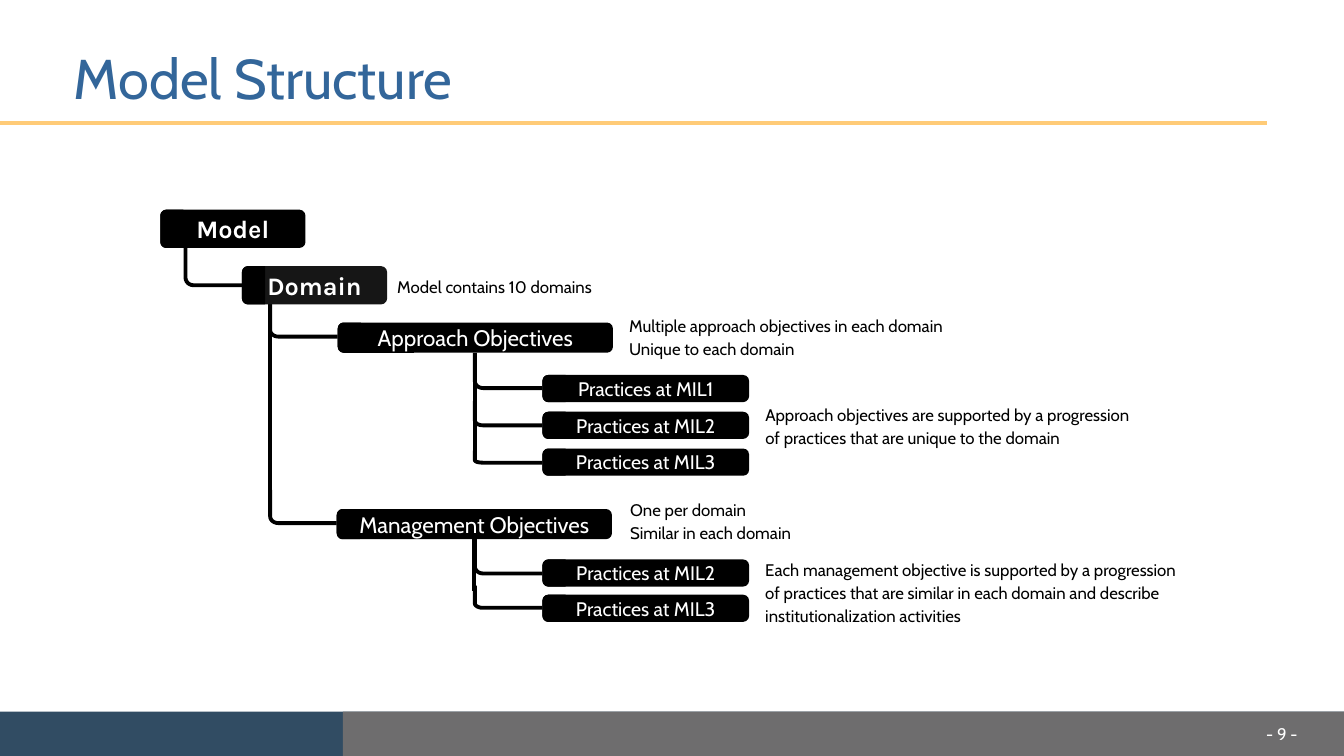
"""Build the Model Structure slide."""
from math import cos, pi, sin

from lxml import etree
from pptx import Presentation
from pptx import util as u
from pptx.dml.color import RGBColor
from pptx.enum import shapes, text
from pptx.oxml import ns

HUES = {"black": "000000", "soft": "161616", "white": "FFFFFF", "navy": "314C63",
        "gray": "6E6D6E", "gold": "FFCB77", "blue": "33669A"}
PAD = ("margin_left", "margin_top", "margin_right", "margin_bottom")
LEFT, MID, RIGHT = text.PP_ALIGN.LEFT, text.PP_ALIGN.CENTER, text.PP_ALIGN.RIGHT
NODES = {
    "model": ("Model", 1.59, 2.08, 1.44, 0.38, "black"),
    "domain": ("Domain", 2.4, 2.64, 1.44, 0.38, "soft"),
    "approach": ("Approach Objectives", 3.35, 3.2, 2.73, 0.3, "black"),
    "manage": ("Management Objectives", 3.34, 5.05, 2.73, 0.3, "black"),
}
FONTS = {0.38: {"name": "Karla", "size": u.Pt(18), "bold": True},
         0.3: {"size": u.Pt(16)}, 0.27: {"size": u.Pt(14)}}
LEVELS = (
    ("approach", 3.72, 0.365, (1, 2, 3), 4.5),
    ("manage", 5.55, 0.35, (2, 3), 5.86),
)
ELBOWS = (
    (1.84, 2.45, 2.4, 2.83), (2.68, 3.01, 3.35, 3.34), (2.68, 4.86, 3.34, 5.19),
    (4.71, 3.5, 5.38, 3.85), (4.71, 3.98, 5.38, 4.22), (4.71, 4.47, 5.38, 4.59),
    (4.71, 5.33, 5.38, 5.69), (4.71, 5.81, 5.38, 6.03),
)
NOTES = (
    ("Model contains 10 domains", 3.94, 2.7, 2.37, 0.26),
    ("Multiple approach objectives in each domain\nUnique to each domain",
     6.24, 3.13, 5.07, 0.4),
    ("One per domain\nSimilar in each domain", 6.25, 4.96, 2.15, 0.4),
    ("Approach objectives are supported by a progression of practices "
     "that are unique to the domain", 7.59, 3.89, 3.71, 0.65),
    ("Each management objective is supported by a progression of practices that are "
     "similar in each domain and describe institutionalization activities",
     7.59, 5.5, 4.16, 0.74),
)


def rgb(hue):
    """Return a named colour."""
    return RGBColor.from_string(HUES[hue])


def write(shape, words, hue, font, align=LEFT, gap=None, wrap=True):
    """Put formatted text into a shape."""
    frame = shape.text_frame
    frame.word_wrap = wrap
    frame.vertical_anchor = text.MSO_ANCHOR.MIDDLE
    for side in PAD:
        setattr(frame, side, 0)
    para = frame.paragraphs[0]
    para.text = words
    para.alignment = align
    para.line_spacing = gap
    for run in para.runs:
        for key, value in {"name": "Cabin", **font}.items():
            setattr(run.font, key, value)
        run.font.color.rgb = rgb(hue)


def label(slide, words, box, *form, **more):
    """Add a text box."""
    write(slide.shapes.add_textbox(*map(u.Inches, box)), words, *form, **more)


def paint(shape, hue):
    """Fill a shape flatly, without outline or shadow."""
    shape.shadow.inherit = False
    shape.fill.solid()
    shape.fill.fore_color.rgb = rgb(hue)
    shape.line.fill.background()


def stroke(line, hue, width):
    """Set a line's colour and width."""
    line.color.rgb = rgb(hue)
    line.width = u.Pt(width)


def block(slide, box, hue, kind=shapes.MSO_SHAPE.RECTANGLE):
    """Add a filled preset shape."""
    shape = slide.shapes.add_shape(kind, *map(u.Inches, box))
    paint(shape, hue)
    return shape


def rule(slide, ends, hue, width):
    """Add a straight line."""
    line = slide.shapes.add_connector(shapes.MSO_CONNECTOR.STRAIGHT,
                                      *map(u.Inches, ends))
    stroke(line.line, hue, width)
    etree.SubElement(line._element.spPr, ns.qn("a:effectLst"))
    return line


def arc(x, y, rx, ry, start):
    """List points on a clockwise quarter turn about a centre."""
    turns = [start + step * pi / 12 for step in range(7)]
    return [(x + rx * cos(turn), y + ry * sin(turn)) for turn in turns]


def trace(slide, dots, close):
    """Draw an outline through points."""
    dots = [(u.Inches(x), u.Inches(y)) for x, y in dots]
    form = slide.shapes.build_freeform(*dots[0])
    form.add_line_segments(dots[1:], close=close)
    return form.convert_to_shape()


def elbow(slide, x, top, right, y):
    """Draw a rounded branch down and to the right."""
    rx, ry = 0.08, 0.2 * (y - top)
    bend = arc(x + rx, y - ry, rx, ry, pi / 2)
    shape = trace(slide, [(right, y), *bend, (x, top)], False)
    shape.shadow.inherit = False
    shape.fill.background()
    stroke(shape.line, "black", 2.75)


def node(slide, words, x, y, wide, high, hue="black"):
    """Add a rounded bar with a black left tab."""
    bar = block(slide, (x, y, wide, high), hue, shapes.MSO_SHAPE.ROUNDED_RECTANGLE)
    rad, end = 0.06, y + high
    bar.adjustments[0] = rad / high
    write(bar, words, "white", FONTS[high], MID, wrap=False)
    dots = [(x + 0.23, y), (x + 0.23, end),
            *arc(x + rad, end - rad, rad, rad, pi / 2),
            *arc(x + rad, y + rad, rad, rad, pi)]
    paint(trace(slide, dots, True), "black")
    return bar


def frame(slide):
    """Add title, rule and footer."""
    block(slide, (0, 7.06, 13.33, 0.44), "navy")
    block(slide, (3.4, 7.06, 9.93, 0.44), "gray")
    rule(slide, (0, 1.22, 12.57, 1.22), "gold", 3)
    label(slide, "Model Structure", (0.73, 0.44, 11.84, 0.74), "blue",
          {"size": u.Pt(40)}, gap=0.9)
    label(slide, "- 9 -", (11.57, 7.08, 1.3, 0.4), "white", {"size": u.Pt(12)}, RIGHT)


def tree(slide):
    """Add the hierarchy of bars and branches."""
    rule(slide, (2.68, 3.01, 2.68, 5.11), "black", 2.75)
    for ends in ELBOWS:
        elbow(slide, *ends)
    bars = {key: node(slide, *item) for key, item in NODES.items()}
    for key, top, step, ranks, end in LEVELS:
        x = bars[key].left.inches + bars[key].width.inches / 2
        trunk = rule(slide, (x, top, x, end), "black", 2.75)
        trunk.begin_connect(bars[key], 2)
        for row, rank in enumerate(ranks):
            node(slide, f"Practices at MIL{rank}", 5.38, top + row * step, 2.05, 0.27)


def main():
    """Build and save the slide."""
    deck = Presentation()
    deck.slide_width, deck.slide_height = u.Inches(13.33), u.Inches(7.5)
    slide = deck.slides.add_slide(deck.slide_layouts[6])
    frame(slide)
    tree(slide)
    for words, *box in NOTES:
        label(slide, words, box, "black", {"size": u.Pt(12)}, gap=u.Pt(16.5))
    deck.save("out.pptx")


if __name__ == "__main__":
    main()
